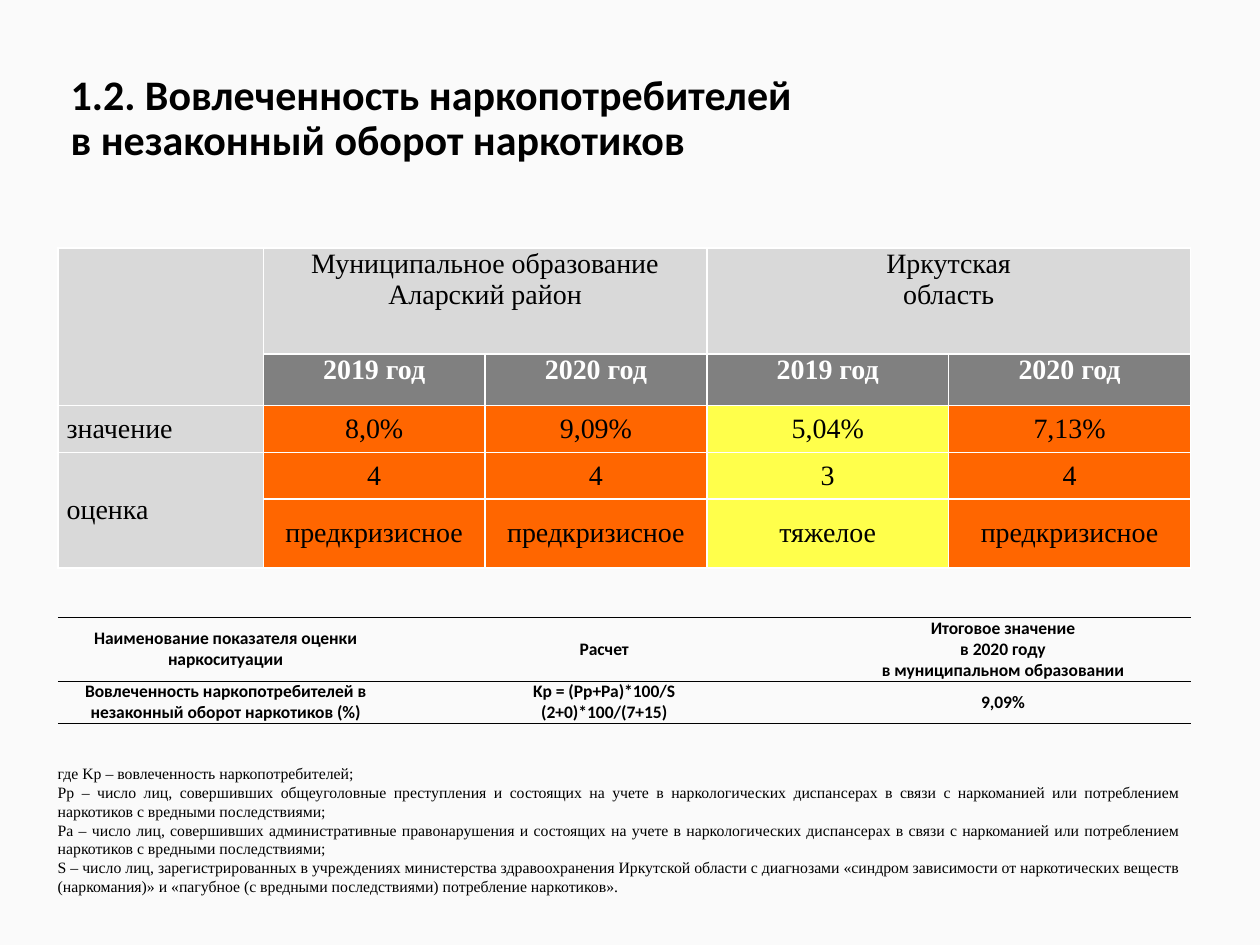
"""Build the slide on drug users' involvement in illegal drug trafficking."""
from pptx import Presentation
from pptx.dml.color import RGBColor
from pptx.enum import text
from pptx.oxml import ns, xmlchemy
from pptx.util import Inches, Pt

BACK = RGBColor(0xFA, 0xFA, 0xFA)
BLACK = RGBColor(0x00, 0x00, 0x00)
WHITE = RGBColor(0xFF, 0xFF, 0xFF)
LIGHT = RGBColor(0xD9, 0xD9, 0xD9)
GREY = RGBColor(0x80, 0x80, 0x80)
ORANGE = RGBColor(0xFF, 0x66, 0x00)
YELLOW = RGBColor(0xFF, 0xFF, 0x4B)
NO_STYLE = "{2D5ABB26-0587-4C30-8999-92F81FD0307C}"
CENTER, LEFT = text.PP_ALIGN.CENTER, text.PP_ALIGN.LEFT
TOP, MIDDLE = text.MSO_ANCHOR.TOP, text.MSO_ANCHOR.MIDDLE


def add_text(tf, lines, align, font, size, color=BLACK, bold=False):
    for i, line in enumerate(lines):
        p = tf.paragraphs[0] if i == 0 else tf.add_paragraph()
        p.alignment = align
        r = p.add_run()
        r.text = line
        r.font.name, r.font.size, r.font.bold = font, Pt(size), bold
        r.font.color.rgb = color


def add_grid(s, top, cols, rows, color, widths):
    frame = s.shapes.add_table(len(rows), len(cols), Inches(0.46), Inches(top),
                               Inches(sum(cols)), Inches(sum(rows)))
    tbl = frame.table
    tbl.first_row = tbl.horz_banding = False
    frame._element.find(".//" + ns.qn("a:tableStyleId")).text = NO_STYLE
    for col, width in zip(tbl.columns, cols):
        col.width = Inches(width)
    for i, (row, height) in enumerate(zip(tbl.rows, rows)):
        row.height = Inches(height)
        for cell in row.cells:
            cell.margin_left = cell.margin_right = Inches(0.07)
            cell.margin_top = cell.margin_bottom = 0
            tcPr = cell._tc.get_or_add_tcPr()
            for side, width in zip(("lnL", "lnR", "lnT", "lnB"), widths[i]):
                ln = xmlchemy.OxmlElement("a:" + side)
                ln.set("w", str(Pt(width)))
                fill = xmlchemy.OxmlElement("a:solidFill" if width else "a:noFill")
                if width:
                    clr = xmlchemy.OxmlElement("a:srgbClr")
                    clr.set("val", str(color))
                    fill.append(clr)
                ln.append(fill)
                tcPr.append(ln)
    return tbl


prs = Presentation()
prs.slide_width, prs.slide_height = Inches(10), Inches(7.5)
s = prs.slides.add_slide(prs.slide_layouts[5])
s.background.fill.solid()
s.background.fill.fore_color.rgb = BACK

title = s.shapes.title
title.left, title.top = Inches(0.46), Inches(0.47)
title.width, title.height = Inches(8.62), Inches(0.95)
tf = title.text_frame
tf.vertical_anchor = MIDDLE
tf.auto_size = text.MSO_AUTO_SIZE.NONE
p = tf.paragraphs[0]
p.alignment, p.line_spacing = LEFT, 0.9
for i, line in enumerate(("1.2. Вовлеченность наркопотребителей", "в незаконный оборот наркотиков")):
    if i:
        p.add_line_break()
    r = p.add_run()
    r.text = line
    r.font.name, r.font.size, r.font.bold = "Calibri", Pt(24), True
    r.font.color.rgb = BLACK

ratings = add_grid(s, 1.97, [1.63, 1.76, 1.76, 1.92, 1.92],
                   [0.84, 0.41, 0.37, 0.37, 0.55], WHITE, [(1, 1, 1, 1)] * 5)
for first, last in (((0, 0), (1, 0)), ((0, 1), (0, 2)), ((0, 3), (0, 4)), ((3, 0), (4, 0))):
    ratings.cell(*first).merge(ratings.cell(*last))
rating_rows = [
    ["", "Муниципальное образование Аларский район", "", "Иркутская\nобласть", ""],
    ["", "2019 год", "2020 год", "2019 год", "2020 год"],
    ["значение", "8,0%", "9,09%", "5,04%", "7,13%"],
    ["оценка", "4", "4", "3", "4"],
    ["", "предкризисное", "предкризисное", "тяжелое", "предкризисное"],
]
for i, row in enumerate(rating_rows):
    for j, words in enumerate(row):
        cell = ratings.cell(i, j)
        cell.vertical_anchor = TOP if i < 2 else MIDDLE
        cell.fill.solid()
        if i == 0 or j == 0:
            cell.fill.fore_color.rgb = LIGHT
        elif i == 1:
            cell.fill.fore_color.rgb = GREY
        else:
            cell.fill.fore_color.rgb = YELLOW if j == 3 else ORANGE
        if words:
            add_text(cell.text_frame, words.split("\n"), CENTER if j else LEFT,
                     "Times New Roman", 16, WHITE if i == 1 else BLACK, i == 1)

formula = add_grid(s, 4.9, [2.66, 3.35, 2.98], [0.5, 0.33], BLACK,
                   [(0, 0, 1, 0.5), (0, 0, 0.5, 1)])
formula_rows = [
    ["Наименование показателя оценки наркоситуации", "Расчет",
     "Итоговое значение\nв 2020 году\nв муниципальном образовании"],
    ["Вовлеченность наркопотребителей в незаконный оборот наркотиков (%)",
     "Kp = (Pp+Pa)*100/S\n(2+0)*100/(7+15)", "9,09%"],
]
for i, row in enumerate(formula_rows):
    for j, words in enumerate(row):
        cell = formula.cell(i, j)
        cell.vertical_anchor = MIDDLE
        cell.fill.background()
        add_text(cell.text_frame, words.split("\n"), CENTER, "Calibri", 10, bold=True)

notes = s.shapes.add_textbox(Inches(0.36), Inches(6.01), Inches(9.09), Inches(1.16))
tf = notes.text_frame
tf.word_wrap = True
tf.auto_size = text.MSO_AUTO_SIZE.SHAPE_TO_FIT_TEXT
add_text(tf, [
    "где Kp – вовлеченность наркопотребителей;",
    "Pp – число лиц, совершивших общеуголовные преступления и состоящих на учете в наркологических "
    "диспансерах в связи с наркоманией или потреблением наркотиков с вредными последствиями;",
    "Pa – число лиц, совершивших административные правонарушения и состоящих на учете в наркологических "
    "диспансерах в связи с наркоманией или потреблением наркотиков с вредными последствиями;",
    "S – число лиц, зарегистрированных в учреждениях министерства здравоохранения Иркутской области "
    "с диагнозами «синдром зависимости от наркотических веществ (наркомания)» и «пагубное "
    "(с вредными последствиями) потребление наркотиков».",
], text.PP_ALIGN.JUSTIFY, "Times New Roman", 9)

prs.save("out.pptx")
